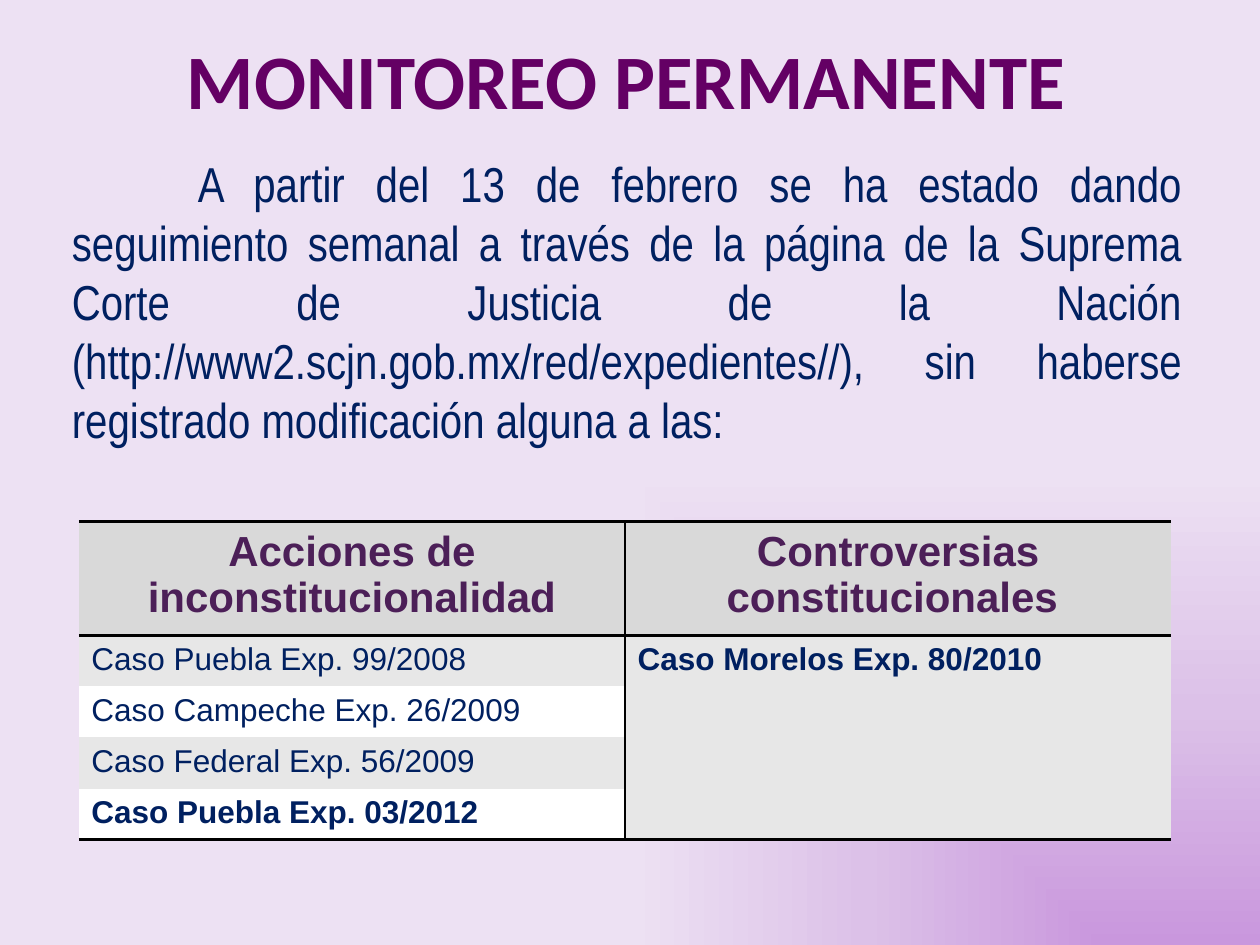
import pptx
import pptx.dml.color
import pptx.enum.text
import pptx.oxml
import pptx.oxml.ns
import pptx.util
from pptx.util import Cm

RGBColor = pptx.dml.color.RGBColor
ALIGN = pptx.enum.text.PP_ALIGN
ANCHOR = pptx.enum.text.MSO_ANCHOR

PURPLE = RGBColor(0x64, 0x00, 0x64)
PLUM = RGBColor(0x4C, 0x1F, 0x58)
NAVY = RGBColor(0x00, 0x20, 0x60)
BLACK = RGBColor(0x00, 0x00, 0x00)
WHITE = RGBColor(0xFF, 0xFF, 0xFF)
HEADER_GREY = RGBColor(0xD9, 0xD9, 0xD9)
BAND_GREY = RGBColor(0xE7, 0xE7, 0xE7)
ORCHID = RGBColor(0xC9, 0x97, 0xDD)
LILAC = RGBColor(0xDC, 0xC1, 0xE8)
MIST = RGBColor(0xED, 0xE1, 0xF3)

HEADERS = ["Acciones de inconstitucionalidad", "Controversias constitucionales "]
ACTIONS = [
    ("Caso Puebla Exp. 99/2008", False),
    ("Caso Campeche Exp. 26/2009", False),
    ("Caso Federal Exp. 56/2009", False),
    ("Caso Puebla Exp. 03/2012", True),
]
CONTROVERSY = "Caso Morelos Exp. 80/2010"
INTRO = (
    "\tA partir del 13 de febrero se ha estado dando seguimiento semanal a través "
    "de la página de la Suprema Corte de Justicia de la Nación "
    "(http://www2.scjn.gob.mx/red/expedientes//), sin haberse registrado "
    "modificación alguna a las: "
)


def write(frame, text, font="Arial", size=18, color=NAVY, bold=False,
          align=ALIGN.LEFT, before=0, tab=None):
    frame.word_wrap = True
    para = frame.paragraphs[0]
    para.alignment = align
    para.space_before = pptx.util.Pt(before)
    if tab:
        para._p.get_or_add_pPr().append(pptx.oxml.parse_xml(
            f'<a:tabLst {pptx.oxml.ns.nsdecls("a")}>'
            f'<a:tab pos="{Cm(tab)}" algn="l"/></a:tabLst>'))
    span = para.add_run()
    span.text = text
    span.font.name = font
    span.font.size = pptx.util.Pt(size)
    span.font.bold = bold
    span.font.color.rgb = color


def set_borders(cell, **widths):
    """Draw black borders, widths in points by side (L, R, T, B); other sides get none."""
    properties = cell._tc.get_or_add_tcPr()
    for index, side in enumerate("LRTB"):
        width = pptx.util.Pt(widths.get(side, 0))
        paint = (f'<a:solidFill><a:srgbClr val="{BLACK}"/></a:solidFill>'
                 if width else "<a:noFill/>")
        properties.insert(index, pptx.oxml.parse_xml(
            f'<a:ln{side} {pptx.oxml.ns.nsdecls("a")} w="{width}">{paint}</a:ln{side}>'))


class SlideBuilder:
    def __init__(self, page):
        self.page = page

    def corner_gradient(self, *colors):
        """Fill the background with colours spreading from the bottom right corner."""
        fill = self.page.background.fill
        fill.solid()
        old = self.page.background._cSld.bg.bgPr.find(pptx.oxml.ns.qn("a:solidFill"))
        step = 100000 // (len(colors) - 1)
        stops = "".join(f'<a:gs pos="{index * step}"><a:srgbClr val="{color}"/></a:gs>'
                        for index, color in enumerate(colors))
        old.getparent().replace(old, pptx.oxml.parse_xml(
            f'<a:gradFill {pptx.oxml.ns.nsdecls("a")} rotWithShape="1">'
            f'<a:gsLst>{stops}</a:gsLst>'
            '<a:path path="rect"><a:fillToRect l="100000" t="100000"/></a:path>'
            '</a:gradFill>'))

    def text_box(self, left, top, width, height, text, anchor=ANCHOR.TOP, **style):
        box = self.page.shapes.add_textbox(Cm(left), Cm(top), Cm(width), Cm(height))
        box.text_frame.vertical_anchor = anchor
        write(box.text_frame, text, **style)

    def cell(self, cell, text, fill, borders, **style):
        cell.fill.solid()
        cell.fill.fore_color.rgb = fill
        set_borders(cell, **borders)
        if text:
            write(cell.text_frame, text, **style)

    def case_table(self, left, top, width, row_height):
        """Lay out the cases; the header row grows to hold its two lines."""
        rows = len(ACTIONS) + 1
        table = self.page.shapes.add_table(
            rows, 2, Cm(left), Cm(top), Cm(width), Cm(row_height * rows)).table

        divider = [{"R": 1}, {"L": 1}]
        for column, header in enumerate(HEADERS):
            self.cell(table.cell(0, column), header, HEADER_GREY,
                      divider[column] | {"T": 2, "B": 2},
                      size=24, color=PLUM, bold=True, align=ALIGN.CENTER)

        table.cell(1, 1).merge(table.cell(rows - 1, 1))
        for row, (action, bold) in enumerate(ACTIONS, start=1):
            top_line = {"T": 2} if row == 1 else {}
            bottom_line = {"B": 2} if row == rows - 1 else {}
            self.cell(table.cell(row, 0), action, BAND_GREY if row % 2 else WHITE,
                      divider[0] | top_line | bottom_line, bold=bold)
            self.cell(table.cell(row, 1), CONTROVERSY if row == 1 else "", BAND_GREY,
                      divider[1] | top_line | {"B": 2}, bold=True)


def main():
    deck = pptx.Presentation()
    deck.slide_width, deck.slide_height = Cm(25.4), Cm(19.05)
    builder = SlideBuilder(deck.slides.add_slide(deck.slide_layouts[6]))
    builder.corner_gradient(ORCHID, LILAC, MIST)
    builder.text_box(1.2, 0, 22.86, 3.18, "MONITOREO PERMANENTE", anchor=ANCHOR.MIDDLE,
                     font="Calibri", size=44, color=PURPLE, bold=True, align=ALIGN.CENTER)
    builder.text_box(1.2, 2.98, 22.86, 14.88, INTRO, font="Arial Narrow", size=28,
                     align=ALIGN.JUSTIFY, before=5.6, tab=2.54)
    builder.case_table(1.59, 10.52, 22.02, 1.03)
    deck.save("out.pptx")


if __name__ == "__main__":
    main()
